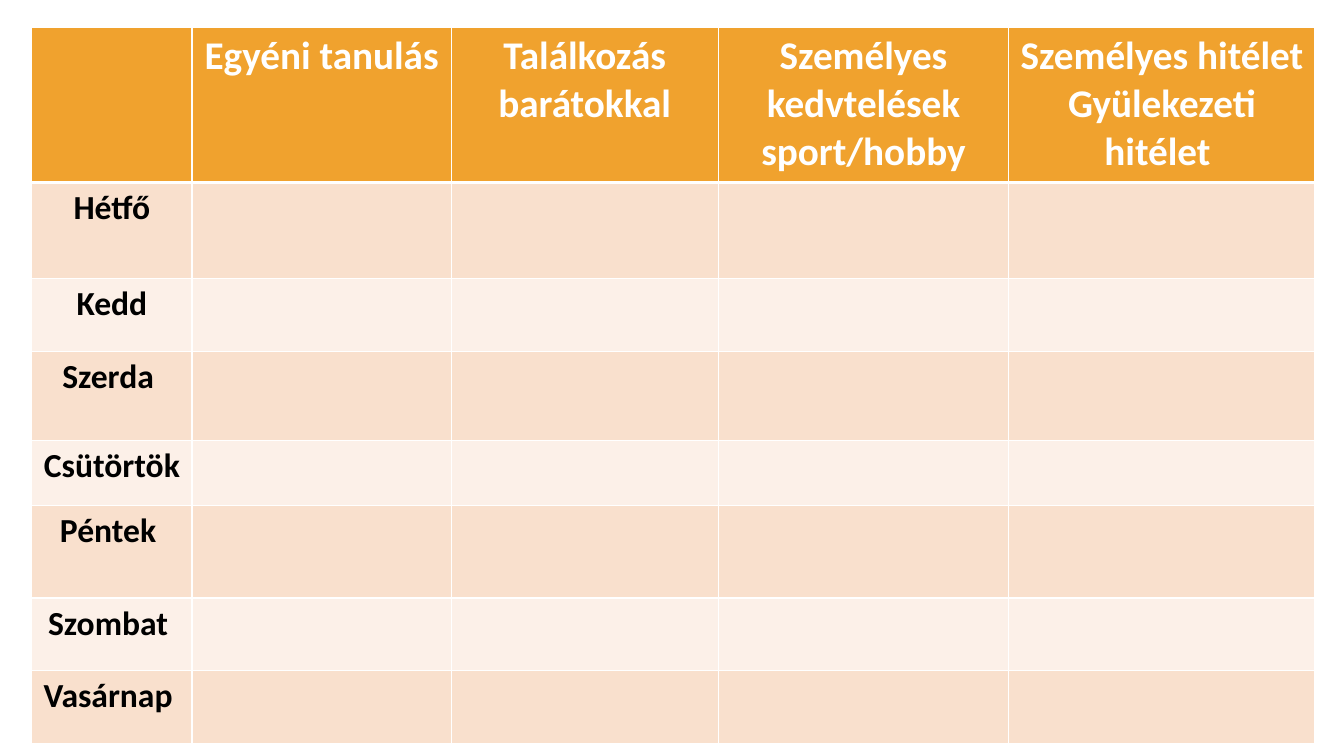
from lxml import etree
from pptx import Presentation
from pptx.dml.color import RGBColor
from pptx.enum.text import PP_ALIGN
from pptx.oxml.ns import qn
from pptx.util import Cm, Pt

CENTER = PP_ALIGN.CENTER
WHITE = RGBColor(0xFF, 0xFF, 0xFF)
BLACK = RGBColor(0x00, 0x00, 0x00)
ORANGE = RGBColor(0xF0, 0xA2, 0x2E)
PEACH = RGBColor(0xF9, 0xE0, 0xCD)
CREAM = RGBColor(0xFC, 0xF0, 0xE8)

BLANK_LAYOUT = 6
COLUMN_WIDTHS = [4.04, 6.53, 6.73, 7.32, 7.72]
ROW_HEIGHTS = [3.91, 2.41, 1.85, 2.24, 1.63, 2.34, 1.83, 1.83]
HEADINGS = [
    "",
    "Egyéni tanulás",
    "Találkozás barátokkal",
    "Személyes kedvtelések sport/hobby",
    "Személyes hitélet \nGyülekezeti hitélet ",
]
DAYS = ["Hétfő", "Kedd", "Szerda ", "Csütörtök", "Péntek ", "Szombat ", "Vasárnap "]


def set_borders(cell, top, bottom):
    """Draw white cell borders, with top and bottom widths in points."""
    properties = cell._tc.get_or_add_tcPr()
    widths = {"a:lnL": 1, "a:lnR": 1, "a:lnT": top, "a:lnB": bottom}
    for position, (tag, width) in enumerate(widths.items()):
        line = etree.Element(qn(tag), w=str(Pt(width)))
        fill = etree.SubElement(line, qn("a:solidFill"))
        etree.SubElement(fill, qn("a:srgbClr"), val=str(WHITE))
        properties.insert(position, line)


def write_cell(cell, text, size, color):
    """Write centred bold text into a cell."""
    cell.text = text
    for paragraph in cell.text_frame.paragraphs:
        paragraph.alignment = CENTER
        paragraph.font.name = "Calibri"
        paragraph.font.size = Pt(size)
        paragraph.font.bold = True
        paragraph.font.color.rgb = color


def style_cell(cell, row):
    """Fill and border a cell according to its row."""
    cell.fill.solid()
    cell.fill.fore_color.rgb = ORANGE if row == 0 else (CREAM, PEACH)[row % 2]
    set_borders(cell, top=3 if row == 1 else 1, bottom=3 if row == 0 else 1)


def add_week_table(slide):
    """Add the weekly planner table."""
    frame = slide.shapes.add_table(
        len(ROW_HEIGHTS), len(COLUMN_WIDTHS), Cm(0.8), Cm(0.69),
        Cm(sum(COLUMN_WIDTHS)), Cm(sum(ROW_HEIGHTS)),
    )
    table = frame.table
    for column, width in zip(table.columns, COLUMN_WIDTHS):
        column.width = Cm(width)
    for index, height in enumerate(ROW_HEIGHTS):
        table.rows[index].height = Cm(height)
        for cell in table.rows[index].cells:
            style_cell(cell, index)
    for index, heading in enumerate(HEADINGS):
        write_cell(table.cell(0, index), heading, 28, WHITE)
    for index, day in enumerate(DAYS, start=1):
        write_cell(table.cell(index, 0), day, 24, BLACK)


def main():
    """Build and save the presentation."""
    presentation = Presentation()
    presentation.slide_width = Cm(33.87)
    presentation.slide_height = Cm(19.05)
    slide = presentation.slides.add_slide(presentation.slide_layouts[BLANK_LAYOUT])
    add_week_table(slide)
    presentation.save("out.pptx")


if __name__ == "__main__":
    main()
